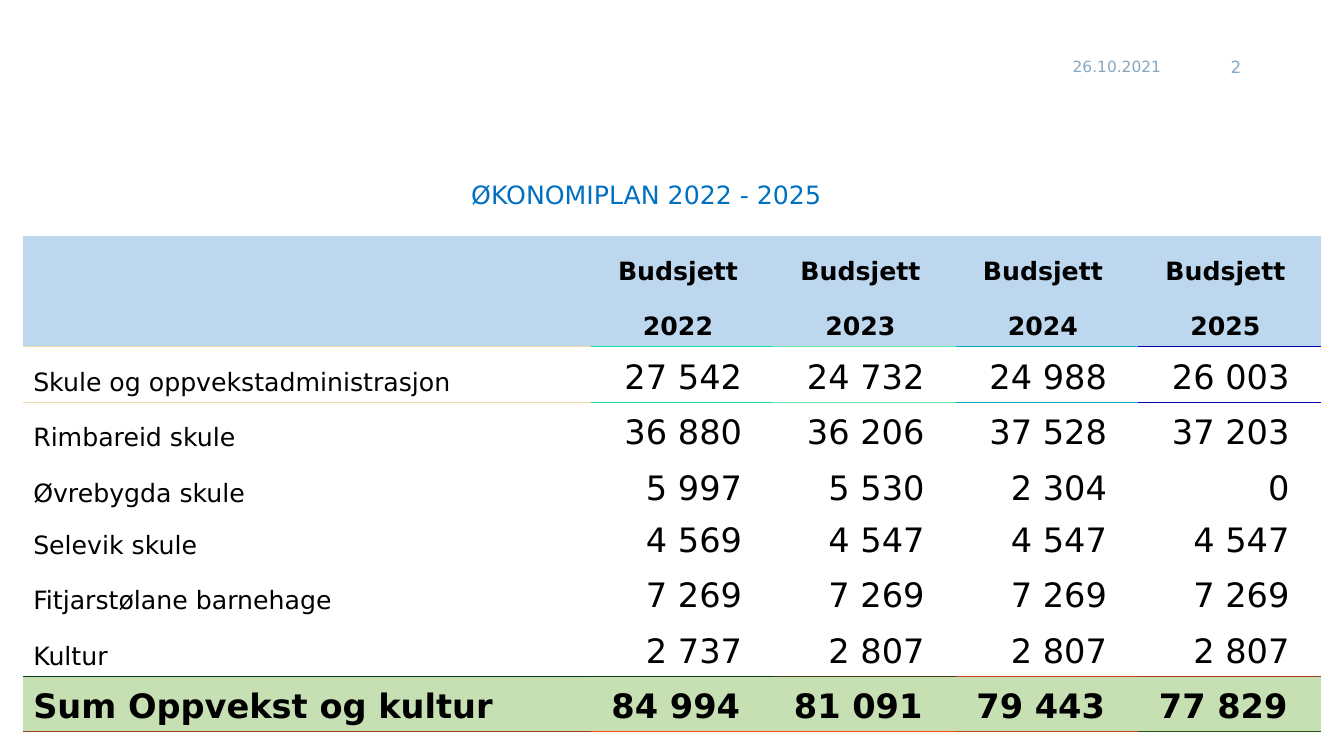
from dataclasses import dataclass

from lxml import etree
from pptx import Presentation
from pptx.dml.color import RGBColor
from pptx.enum.text import MSO_ANCHOR, MSO_AUTO_SIZE, PP_ALIGN
from pptx.oxml.ns import qn
from pptx.util import Inches, Pt

LEFT, CENTER, RIGHT = PP_ALIGN.LEFT, PP_ALIGN.CENTER, PP_ALIGN.RIGHT
TOP, MIDDLE, BOTTOM = MSO_ANCHOR.TOP, MSO_ANCHOR.MIDDLE, MSO_ANCHOR.BOTTOM

TITLE = "ØKONOMIPLAN 2022 - 2025"
DATE, PAGE_NUMBER = "26.10.2021", "2"
HEADER = [
    ("", "Budsjett", "Budsjett", "Budsjett", "Budsjett"),
    ("", "2022", "2023", "2024", "2025"),
]
BUDGET = [
    ("Skule og oppvekstadministrasjon", "27 542", "24 732", "24 988", "26 003"),
    ("Rimbareid skule", "36 880", "36 206", "37 528", "37 203"),
    ("Øvrebygda skule", "5 997", "5 530", "2 304", "0"),
    ("Selevik skule", "4 569", "4 547", "4 547", "4 547"),
    ("Fitjarstølane barnehage", "7 269", "7 269", "7 269", "7 269"),
    ("Kultur", "2 737", "2 807", "2 807", "2 807"),
]
TOTAL = ("Sum Oppvekst og kultur", "84 994", "81 091", "79 443", "77 829")
ROWS = HEADER + BUDGET + [TOTAL]
TOTAL_ROW = len(ROWS) - 1
SHORT_ROW = 5

# Line colours under a row, bottom row first so that each cell's lnT precedes its lnB.
RULES = {
    TOTAL_ROW: ("A0441A", "F8461A", "F8461A", "C04B1A", "28501A"),
    TOTAL_ROW - 1: ("003C1A", "103E1A", "403E1A", "D83F1A", "A8421A"),
    len(HEADER) - 1: ("F0D9A8", "18DFA8", "70E4A8", "08ABC9", "0803B1"),
}
PLAIN_STYLE = "{2D5ABB26-0587-4C30-8999-92F81FD0307C}"


@dataclass(frozen=True)
class Theme:
    font: str = "DejaVu Sans"
    title: str = "0070C0"
    muted: str = "86A7C2"
    text: str = "000000"
    header_fill: str = "BDD7EE"
    total_fill: str = "C6E0B4"
    date_size: int = 11
    number_size: int = 12
    label_size: int = 18
    figure_size: int = 24


THEME = Theme()


def write(frame, text, size, color, align=LEFT, bold=False):
    para = frame.paragraphs[0]
    para.text = text
    para.alignment = align
    para.font.name = THEME.font
    para.font.size = Pt(size)
    para.font.bold = bold
    para.font.color.rgb = RGBColor.from_string(color)


def add_note(page, place, text, size, align=LEFT):
    frame = page.shapes.add_textbox(*map(Inches, place)).text_frame
    frame.word_wrap = True
    frame.vertical_anchor = MIDDLE
    write(frame, text, size, THEME.muted, align)


def set_border(cell, side, color):
    properties = cell._tc.get_or_add_tcPr()
    line = etree.Element(qn(f"a:{side}"), w=str(Pt(0.75)))
    fill = etree.SubElement(line, qn("a:solidFill"))
    etree.SubElement(fill, qn("a:srgbClr"), val=color)
    properties.insert(0, line)


def fill_cell(cell, row, column):
    is_header, is_total = row < len(HEADER), row == TOTAL_ROW
    if is_header or is_total:
        cell.fill.solid()
        color = THEME.header_fill if is_header else THEME.total_fill
        cell.fill.fore_color.rgb = RGBColor.from_string(color)
    else:
        cell.fill.background()

    cell.vertical_anchor = BOTTOM
    size, align = THEME.label_size, LEFT
    if is_header:
        align = CENTER
        cell.margin_right = Inches(0.18)
    elif column:
        align = RIGHT
        cell.margin_right = Inches(0.33 if is_total else 0.31)
    if is_total or (column and not is_header):
        size = THEME.figure_size
    write(cell.text_frame, ROWS[row][column], size, THEME.text, align, is_header or is_total)


def add_budget_table(page):
    widths = [5.63] + [1.81] * 4
    heights = [0.52 if row == SHORT_ROW else 0.55 for row in range(len(ROWS))]
    place = (0.23, 2.34, sum(widths), sum(heights))
    table = page.shapes.add_table(len(ROWS), len(widths), *map(Inches, place)).table
    table.first_row = table.horz_banding = False
    table._tbl.tblPr.find(qn("a:tableStyleId")).text = PLAIN_STYLE
    for column, width in enumerate(widths):
        table.columns[column].width = Inches(width)
    for row, height in enumerate(heights):
        table.rows[row].height = Inches(height)
        for column in range(len(widths)):
            fill_cell(table.cell(row, column), row, column)
    for row, colors in RULES.items():
        for column, color in enumerate(colors):
            set_border(table.cell(row, column), "lnB", color)
            if row < TOTAL_ROW:
                set_border(table.cell(row + 1, column), "lnT", color)


def main():
    deck = Presentation()
    deck.slide_width, deck.slide_height = Inches(13.33), Inches(7.5)
    page = deck.slides.add_slide(deck.slide_layouts[5])

    title = page.shapes.title
    title.left, title.top = Inches(2.83), Inches(1.73)
    title.width, title.height = Inches(7.16), Inches(0.4)
    title.text_frame.vertical_anchor = TOP
    title.text_frame.auto_size = MSO_AUTO_SIZE.SHAPE_TO_FIT_TEXT
    write(title.text_frame, TITLE, THEME.label_size, THEME.title, CENTER)

    add_note(page, (10.54, 0.46, 1.15, 0.4), DATE, THEME.date_size)
    add_note(page, (11.84, 0.46, 0.57, 0.4), PAGE_NUMBER, THEME.number_size, RIGHT)
    add_budget_table(page)
    deck.save("out.pptx")


if __name__ == "__main__":
    main()
